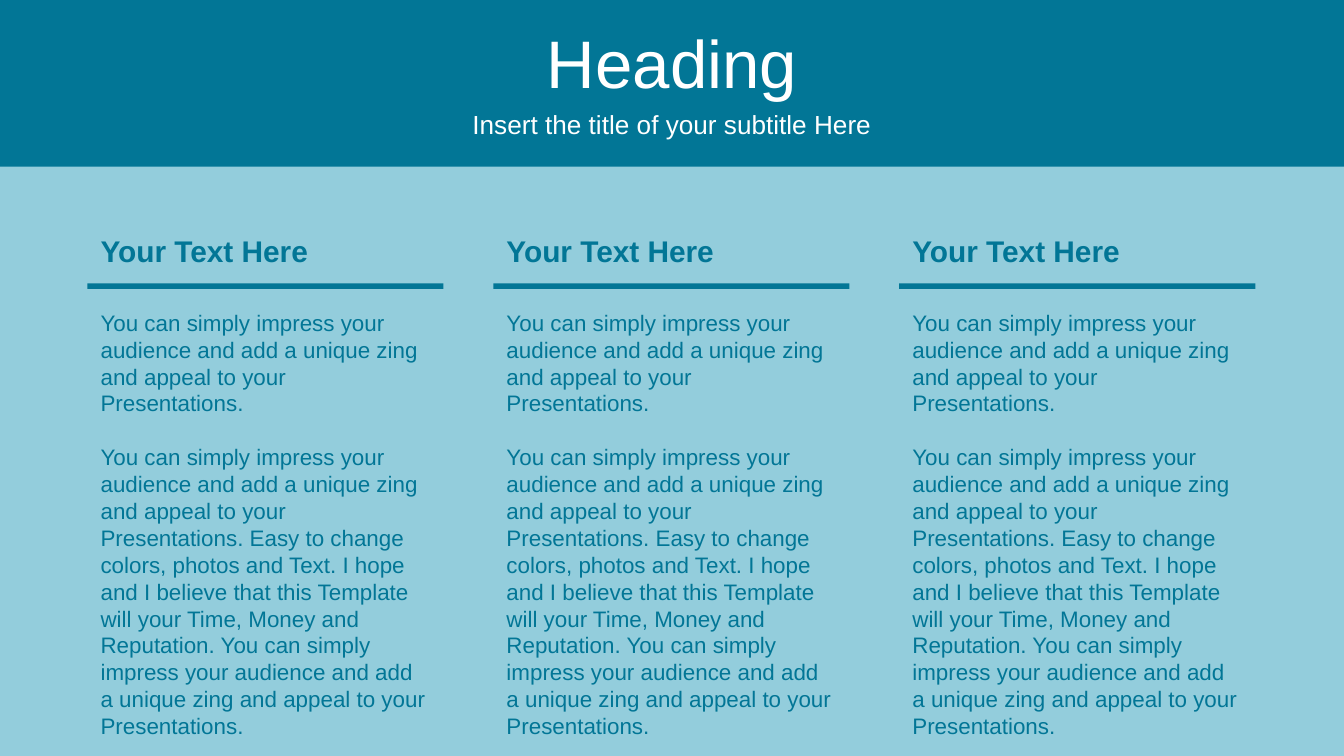
import typing

import lxml.etree
import pptx
import pptx.dml.color
import pptx.enum.shapes
import pptx.enum.text
import pptx.oxml.ns
import pptx.util

COLORS = {"teal": "027696", "wash": "4BACC6", "white": "FFFFFF"}
SLIDE_WIDTH = pptx.util.Inches(10)
SLIDE_HEIGHT = SLIDE_WIDTH * 9 // 16
FIRST_COLUMN = pptx.util.Inches(0.65)
COLUMN_WIDTH = pptx.util.Inches(2.65)
COLUMN_STEP = pptx.util.Inches(3.02)

INTRO = (
    "You can simply impress your audience and add a unique zing "
    "and appeal to your Presentations."
)
DETAIL = (
    f"{INTRO} Easy to change colors, photos and Text. I hope and I believe "
    f"that this Template will your Time, Money and Reputation. {INTRO}"
)


class Area(typing.NamedTuple):
    left: int
    top: int
    width: int
    height: int


class TextStyle(typing.NamedTuple):
    size: float
    color: str
    bold: bool = False
    centered: bool = False
    gap: float = 0


class Column(typing.NamedTuple):
    heading: str
    paragraphs: tuple[str, ...]


HEADING = TextStyle(36, "white", centered=True)
SUBTITLE = TextStyle(14, "white", centered=True)
COLUMN_HEADING = TextStyle(16, "teal", bold=True)
COLUMN_BODY = TextStyle(12, "teal", gap=14.4)
COLUMNS = [Column("Your Text Here", (INTRO, DETAIL))] * 3


def row_area(top: float, height: float) -> Area:
    return Area(0, pptx.util.Inches(top), SLIDE_WIDTH, pptx.util.Inches(height))


def column_area(index: int, top: float, height: float) -> Area:
    return Area(
        FIRST_COLUMN + index * COLUMN_STEP,
        pptx.util.Inches(top),
        COLUMN_WIDTH,
        pptx.util.Inches(height),
    )


def rgb(name: str) -> pptx.dml.color.RGBColor:
    return pptx.dml.color.RGBColor.from_string(COLORS[name])


def add_rectangle(slide, area: Area, color: str, opacity: int = 100) -> None:
    shape = slide.shapes.add_shape(pptx.enum.shapes.MSO_SHAPE.RECTANGLE, *area)
    shape.shadow.inherit = False
    shape.line.fill.background()
    shape.fill.solid()
    shape.fill.fore_color.rgb = rgb(color)
    if opacity < 100:
        color_element = shape.element.spPr.find(".//" + pptx.oxml.ns.qn("a:srgbClr"))
        alpha = lxml.etree.SubElement(color_element, pptx.oxml.ns.qn("a:alpha"))
        alpha.set("val", str(opacity * 1000))


def write_text(shape, paragraphs: tuple[str, ...], style: TextStyle) -> None:
    frame = shape.text_frame
    anchors = pptx.enum.text.MSO_ANCHOR
    sizing = pptx.enum.text.MSO_AUTO_SIZE
    frame_format = {
        "word_wrap": True,
        "vertical_anchor": anchors.MIDDLE if style.centered else anchors.TOP,
        "auto_size": sizing.NONE if style.centered else sizing.SHAPE_TO_FIT_TEXT,
    }
    for name, value in frame_format.items():
        setattr(frame, name, value)
    alignments = pptx.enum.text.PP_ALIGN
    font_format = {
        "name": "Arial",
        "size": pptx.util.Pt(style.size),
        "bold": style.bold,
    }
    for index, text in enumerate(paragraphs):
        paragraph = frame.add_paragraph() if index else frame.paragraphs[0]
        paragraph.alignment = alignments.CENTER if style.centered else alignments.LEFT
        paragraph.space_before = pptx.util.Pt(style.gap if index else 0)
        run = paragraph.add_run()
        run.text = text
        for name, value in font_format.items():
            setattr(run.font, name, value)
        run.font.color.rgb = rgb(style.color)


def add_text(slide, area: Area, paragraphs: tuple[str, ...], style: TextStyle) -> None:
    write_text(slide.shapes.add_textbox(*area), paragraphs, style)


def place_title(slide, area: Area, text: str) -> None:
    title = slide.shapes.title
    for name, value in area._asdict().items():
        setattr(title, name, value)
    write_text(title, (text,), HEADING)
    slide.shapes.element.append(title.element)


def add_column(slide, index: int, column: Column) -> None:
    add_text(slide, column_area(index, 1.68, 0.37), (column.heading,), COLUMN_HEADING)
    add_text(slide, column_area(index, 2.25, 2.93), column.paragraphs, COLUMN_BODY)
    add_rectangle(slide, column_area(index, 2.11, 0.04), "teal")


def main() -> None:
    presentation = pptx.Presentation()
    presentation.slide_width = SLIDE_WIDTH
    presentation.slide_height = SLIDE_HEIGHT
    slide = presentation.slides.add_slide(presentation.slide_layouts[5])
    add_rectangle(slide, Area(0, 0, SLIDE_WIDTH, SLIDE_HEIGHT), "wash", opacity=60)
    add_rectangle(slide, row_area(0, 1.24), "teal")
    place_title(slide, row_area(0.14, 0.63), "Heading")
    add_text(
        slide,
        row_area(0.77, 0.31),
        ("Insert the title of your subtitle Here",),
        SUBTITLE,
    )
    for index, column in enumerate(COLUMNS):
        add_column(slide, index, column)
    presentation.save("out.pptx")


if __name__ == "__main__":
    main()
